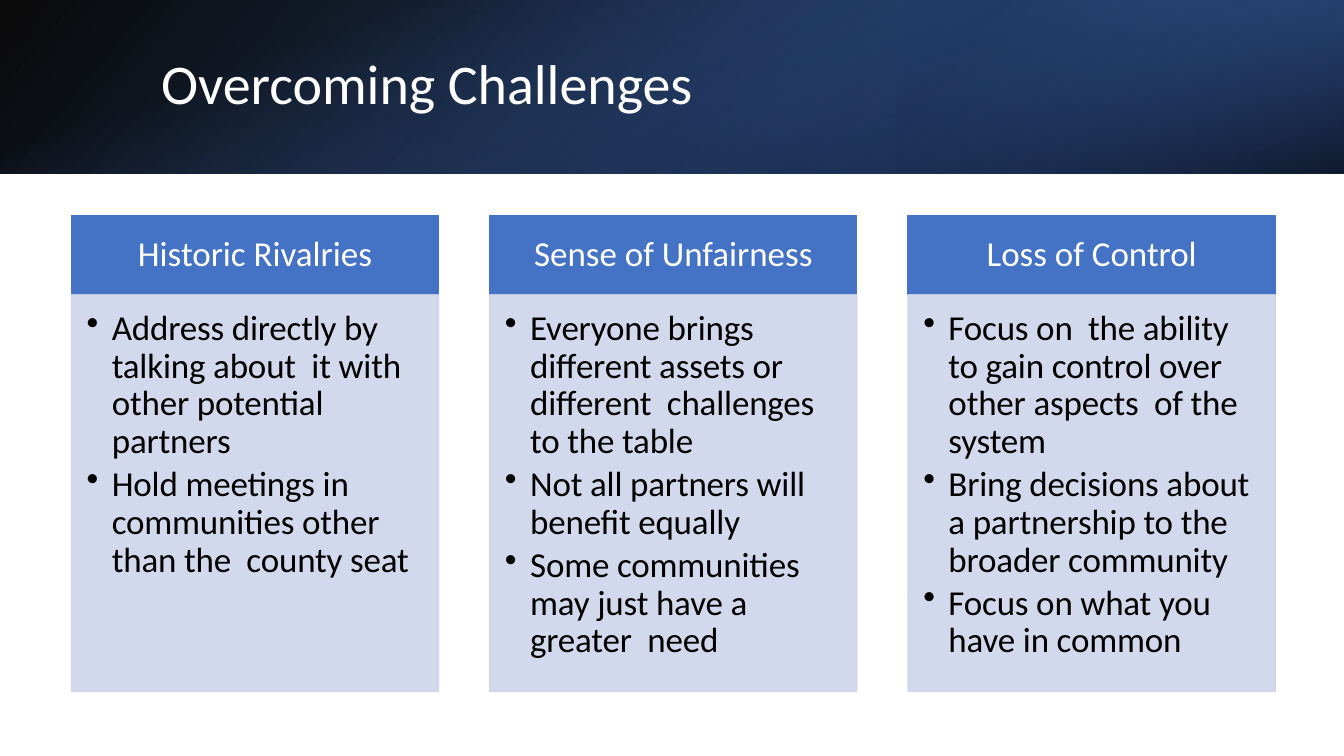
from dataclasses import dataclass
from lxml.etree import SubElement
from pptx import Presentation
from pptx.dml.color import RGBColor
from pptx.enum.shapes import MSO_SHAPE
from pptx.enum.text import MSO_ANCHOR, PP_ALIGN
from pptx.oxml.ns import qn
from pptx.util import Inches, Pt


@dataclass(frozen=True)
class Theme:
    """Colours and type sizes of the slide."""
    font: str = "Calibri"
    title_size: int = 40
    text_size: int = 25
    light: str = "FFFFFF"
    dark: str = "000000"
    accent: str = "4472C4"
    deep: str = "2F5597"
    navy: str = "203864"
    panel: str = "CFD5EA"


THEME = Theme()
SLIDE_W, SLIDE_H = 13.333, 7.5
BAND_H = 1.72
CHALLENGES = [
    ("Historic Rivalries", [
        "Address directly by talking about  it with other potential partners",
        "Hold meetings in communities other than the  county seat"]),
    ("Sense of Unfairness", [
        "Everyone brings different assets or different  challenges to the table",
        "Not all partners will benefit equally",
        "Some communities may just have a greater  need"]),
    ("Loss of Control", [
        "Focus on  the ability to gain control over other aspects  of the system",
        "Bring decisions about a partnership to the  broader community",
        "Focus on what you have in common"]),
]


def add_rect(slide, box):
    """Add a rectangle without shadow or line."""
    rect = slide.shapes.add_shape(MSO_SHAPE.RECTANGLE, *map(Inches, box))
    rect.shadow.inherit = False
    rect.line.fill.background()
    return rect


def set_alpha(color_parent, percent):
    """Give the colour inside a fill element an opacity."""
    color = color_parent.find(qn("a:srgbClr"))
    SubElement(color, qn("a:alpha")).set("val", str(percent * 1000))


def add_gradient(slide, box, stops, angle, rotation=0, flip=False):
    """Cover the box with a rotated linear gradient of (position, colour, opacity)."""
    left, top, width, height = box
    if rotation == 90:
        left, top = left + (width - height) / 2, top + (height - width) / 2
        width, height = height, width
    rect = add_rect(slide, (left, top, width, height))
    rect.rotation = rotation
    properties = rect._element.spPr
    if flip:
        properties.find(qn("a:xfrm")).set("flipH", "1")
    rect.fill.gradient()
    gradient = properties.find(qn("a:gradFill"))
    for child in list(gradient):
        gradient.remove(child)
    gradient.set("rotWithShape", "1")
    stop_list = SubElement(gradient, qn("a:gsLst"))
    for position, color, opacity in stops:
        stop = SubElement(stop_list, qn("a:gs"), pos=str(position * 1000))
        SubElement(stop, qn("a:srgbClr"), val=color)
        set_alpha(stop, opacity)
    SubElement(gradient, qn("a:lin"), ang=str(angle * 60000), scaled="0")


def write(frame, lines, size, color, insets, anchor, align=PP_ALIGN.LEFT, after=0):
    """Fill a text frame with equally formatted paragraphs."""
    frame.word_wrap = True
    frame.vertical_anchor = anchor
    (frame.margin_left, frame.margin_top,
     frame.margin_right, frame.margin_bottom) = map(Inches, insets)
    frame.text = "\n".join(lines)
    for paragraph in frame.paragraphs:
        paragraph.alignment = align
        paragraph.line_spacing = 0.9
        paragraph.space_after = Pt(after)
        for run in paragraph.runs:
            run.font.name = THEME.font
            run.font.size = Pt(size)
            run.font.color.rgb = RGBColor.from_string(color)


def add_bullets(frame, indent=0.25, spacing=-10):
    """Hang a bullet before each paragraph and tighten its letters."""
    for paragraph in frame.paragraphs:
        properties = paragraph._p.get_or_add_pPr()
        properties.set("marL", str(Inches(indent)))
        properties.set("indent", str(-Inches(indent)))
        SubElement(properties, qn("a:buChar"), char="•")
        for run in paragraph.runs:
            run._r.get_or_add_rPr().set("spc", str(spacing))


def add_title_band(slide, box, title):
    """Draw the shaded band with the slide title."""
    left, top, width, height = box
    add_gradient(slide, box, [(0, THEME.dark, 96), (100, THEME.deep, 100)], 140, flip=True)
    add_gradient(slide, (left + width * 2 / 3, top, width / 3, height),
                 [(19, THEME.navy, 68), (100, THEME.accent, 79)], 320, 180, True)
    add_gradient(slide, box, [(23, THEME.accent, 0), (99, THEME.dark, 74)], 340, 90)
    heading = slide.shapes.add_textbox(
        *map(Inches, (left + 1.5, top + 0.38, width - 2.35, 0.96)))
    write(heading.text_frame, [title], THEME.title_size, THEME.light,
          (0.1, 0.05, 0.1, 0.05), MSO_ANCHOR.MIDDLE)


def add_challenge(slide, box, name, answers, header_h=0.785):
    """Draw one column: a header over a panel of bullets."""
    left, top, width, height = box
    header = add_rect(slide, (left, top, width, header_h))
    panel = add_rect(slide, (left, top + header_h, width, height - header_h))
    for part, color in ((header, THEME.accent), (panel, THEME.panel)):
        for fill in (part.fill, part.line.fill):
            fill.solid()
            fill.fore_color.rgb = RGBColor.from_string(color)
        part.line.width = Pt(1)
    for solid in panel._element.spPr.iter(qn("a:solidFill")):
        set_alpha(solid, 90)
    write(header.text_frame, [name], THEME.text_size, THEME.light,
          (0.19, 0.11, 0.19, 0.11), MSO_ANCHOR.MIDDLE, PP_ALIGN.CENTER)
    write(panel.text_frame, answers, THEME.text_size, THEME.dark,
          (0.15, 0.15, 0.19, 0.22), MSO_ANCHOR.TOP, after=3.75)
    add_bullets(panel.text_frame)


def add_challenges(slide, box, challenges, gap=0.51):
    """Share the box among equal columns."""
    left, top, width, height = box
    column_w = (width - gap * (len(challenges) - 1)) / len(challenges)
    for index, (name, answers) in enumerate(challenges):
        column = (left + index * (column_w + gap), top, column_w, height)
        add_challenge(slide, column, name, answers)


def main():
    """Build and save the slide."""
    deck = Presentation()
    deck.slide_width, deck.slide_height = Inches(SLIDE_W), Inches(SLIDE_H)
    slide = deck.slides.add_slide(deck.slide_layouts[6])
    add_title_band(slide, (0, 0, SLIDE_W, BAND_H), "Overcoming Challenges")
    add_challenges(slide, (0.71, 2.14, 11.94, 4.72), CHALLENGES)
    deck.save("out.pptx")


if __name__ == "__main__":
    main()
